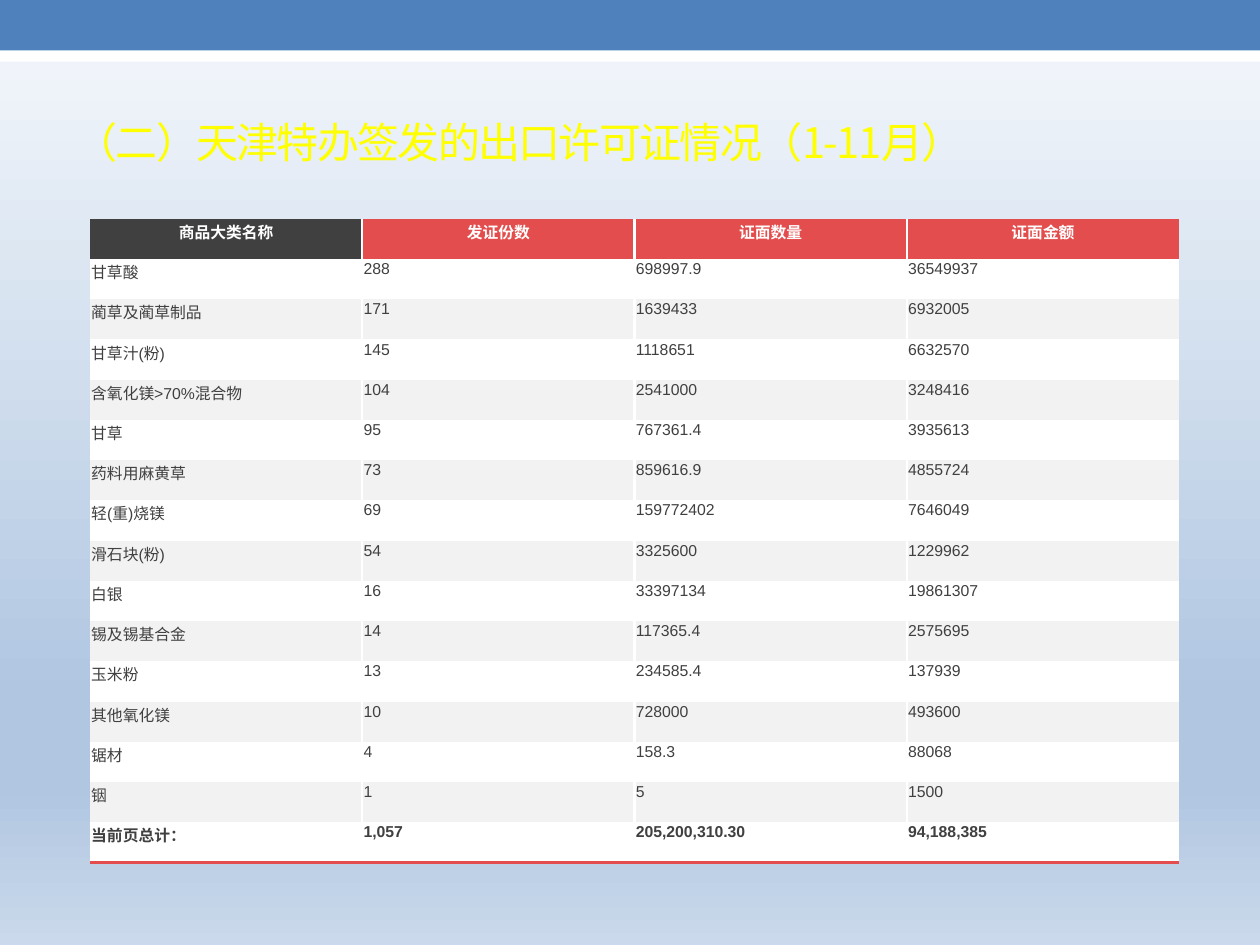
import pptx
import pptx.dml.color
import pptx.enum.shapes
import pptx.enum.text
import pptx.oxml
import pptx.oxml.ns
import pptx.util

Pt = pptx.util.Pt
RGBColor = pptx.dml.color.RGBColor
ALIGN = pptx.enum.text.PP_ALIGN
ANCHOR = pptx.enum.text.MSO_ANCHOR

WHITE = RGBColor(0xFF, 0xFF, 0xFF)
BLUE = RGBColor(0x4F, 0x81, 0xBD)
YELLOW = RGBColor(0xFF, 0xFF, 0x00)
DARK = RGBColor(0x40, 0x40, 0x40)
RED = RGBColor(0xE3, 0x4D, 0x4D)
BAND = RGBColor(0xF2, 0xF2, 0xF2)
SKY = [(0, RGBColor(0xF6, 0xF9, 0xFC)), (74, RGBColor(0xB0, 0xC6, 0xE1)),
       (83, RGBColor(0xB0, 0xC6, 0xE1)), (100, RGBColor(0xCA, 0xD9, 0xEB))]

LATIN_FONT = "Arial"
CJK_FONT = "Noto Sans CJK SC"
NO_TABLE_STYLE = "{2D5ABB26-0587-4C30-8999-92F81FD0307C}"

TITLE = "（二）天津特办签发的出口许可证情况（1-11月）"
LICENCES = [
    ("商品大类名称", "发证份数", "证面数量", "证面金额"),
    ("甘草酸", "288", "698997.9", "36549937"),
    ("蔺草及蔺草制品", "171", "1639433", "6932005"),
    ("甘草汁(粉)", "145", "1118651", "6632570"),
    ("含氧化镁>70%混合物", "104", "2541000", "3248416"),
    ("甘草", "95", "767361.4", "3935613"),
    ("药料用麻黄草", "73", "859616.9", "4855724"),
    ("轻(重)烧镁", "69", "159772402", "7646049"),
    ("滑石块(粉)", "54", "3325600", "1229962"),
    ("白银", "16", "33397134", "19861307"),
    ("锡及锡基合金", "14", "117365.4", "2575695"),
    ("玉米粉", "13", "234585.4", "137939"),
    ("其他氧化镁", "10", "728000", "493600"),
    ("锯材", "4", "158.3", "88068"),
    ("铟", "1", "5", "1500"),
    ("当前页总计：", "1,057", "205,200,310.30", "94,188,385"),
]


def apply_format(target, values):
    for name, value in values.items():
        setattr(target, name, value)


def xml(markup):
    """Parse one DrawingML element."""
    head, rest = markup.split(">", 1)
    return pptx.oxml.parse_xml(
        f"{head} {pptx.oxml.ns.nsdecls('a')}>{rest}")


def line_xml(tag, color, width):
    return xml(f'<a:{tag} w="{Pt(width)}"><a:solidFill><a:srgbClr val="{color}"/>'
               f'</a:solidFill></a:{tag}>')


def format_run(run, color, **values):
    apply_format(run.font, values)
    run.font.color.rgb = color
    properties = run.font._element
    latin = properties.find(pptx.oxml.ns.qn("a:latin"))
    latin.addnext(xml(f'<a:ea typeface="{CJK_FONT}"></a:ea>'))
    return properties


def paint_background(slide):
    fill = slide.background.fill
    fill.gradient()
    fill.gradient_angle = 270
    stops = fill._fill._gradFill.find(pptx.oxml.ns.qn("a:gsLst"))
    for stop in list(stops):
        stops.remove(stop)
    for position, color in SKY:
        stops.append(xml(f'<a:gs pos="{position * 1000}">'
                         f'<a:srgbClr val="{color}"/></a:gs>'))


def add_bar(slide, top, height, color):
    bar = slide.shapes.add_shape(pptx.enum.shapes.MSO_SHAPE.RECTANGLE,
                                 Pt(0), Pt(top), Pt(720), Pt(height))
    bar.shadow.inherit = False
    bar.fill.solid()
    bar.fill.fore_color.rgb = color
    bar.line.fill.background()


def set_title(slide):
    title = slide.shapes.title
    apply_format(title, {"left": Pt(36), "top": Pt(41.8),
                         "width": Pt(648), "height": Pt(77.8)})
    apply_format(title.text_frame, {
        "text": TITLE, "word_wrap": True, "vertical_anchor": ANCHOR.MIDDLE,
        "auto_size": pptx.enum.text.MSO_AUTO_SIZE.NONE})
    heading = title.text_frame.paragraphs[0]
    heading.alignment = ALIGN.LEFT
    properties = format_run(heading.runs[0], YELLOW, name=CJK_FONT, size=Pt(24))
    properties.set("spc", "-100")
    properties.insert(0, line_xml("ln", YELLOW, 0.75))
    # Keep the title in front of the bars
    slide.shapes._spTree.append(title._element)


def fill_color(row, column):
    if row == 0:
        return RED if column else DARK
    return WHITE if row % 2 else BAND


def fill_cell(cell, text, row, column):
    last_row, last_column = len(LICENCES) - 1, len(LICENCES[0]) - 1
    is_header = row == 0
    apply_format(cell, {
        "text": text, "vertical_anchor": ANCHOR.TOP,
        "margin_left": Pt(0.75), "margin_right": Pt(0.75),
        "margin_top": Pt(0.75), "margin_bottom": Pt(3.6)})
    paragraph = cell.text_frame.paragraphs[0]
    paragraph.alignment = ALIGN.CENTER if is_header else ALIGN.LEFT
    format_run(paragraph.runs[0], WHITE if is_header else DARK,
               name=LATIN_FONT, size=Pt(9), bold=row in (0, last_row))
    cell.fill.solid()
    cell.fill.fore_color.rgb = fill_color(row, column)

    # White rules between columns, a red one under the total
    borders = [("lnL", WHITE, column > 0), ("lnR", WHITE, column < last_column),
               ("lnB", RED, row == last_row)]
    shown = [(tag, color) for tag, color, visible in borders if visible]
    for place, (tag, color) in enumerate(shown):
        cell._tc.get_or_add_tcPr().insert(place, line_xml(tag, color, 1.5))


def add_licence_table(slide):
    frame = slide.shapes.add_table(len(LICENCES), len(LICENCES[0]),
                                   Pt(51.4), Pt(125), Pt(622.4), Pt(368))
    table = frame.table
    apply_format(table, {"first_row": True, "horz_banding": False})
    style = table._tbl.tblPr.find(pptx.oxml.ns.qn("a:tableStyleId"))
    style.text = NO_TABLE_STYLE
    for column in table.columns:
        column.width = Pt(155.6)
    for row in table.rows:
        row.height = Pt(23)
    for row, texts in enumerate(LICENCES):
        for column, text in enumerate(texts):
            fill_cell(table.cell(row, column), text, row, column)


def main():
    deck = pptx.Presentation()
    apply_format(deck, {"slide_width": Pt(720), "slide_height": Pt(540)})
    slide = deck.slides.add_slide(deck.slide_layouts[5])
    paint_background(slide)
    # Header bars
    add_bar(slide, 17.3, 18, WHITE)
    add_bar(slide, 0, 28.8, BLUE)
    set_title(slide)
    add_licence_table(slide)
    deck.save("out.pptx")


if __name__ == "__main__":
    main()
